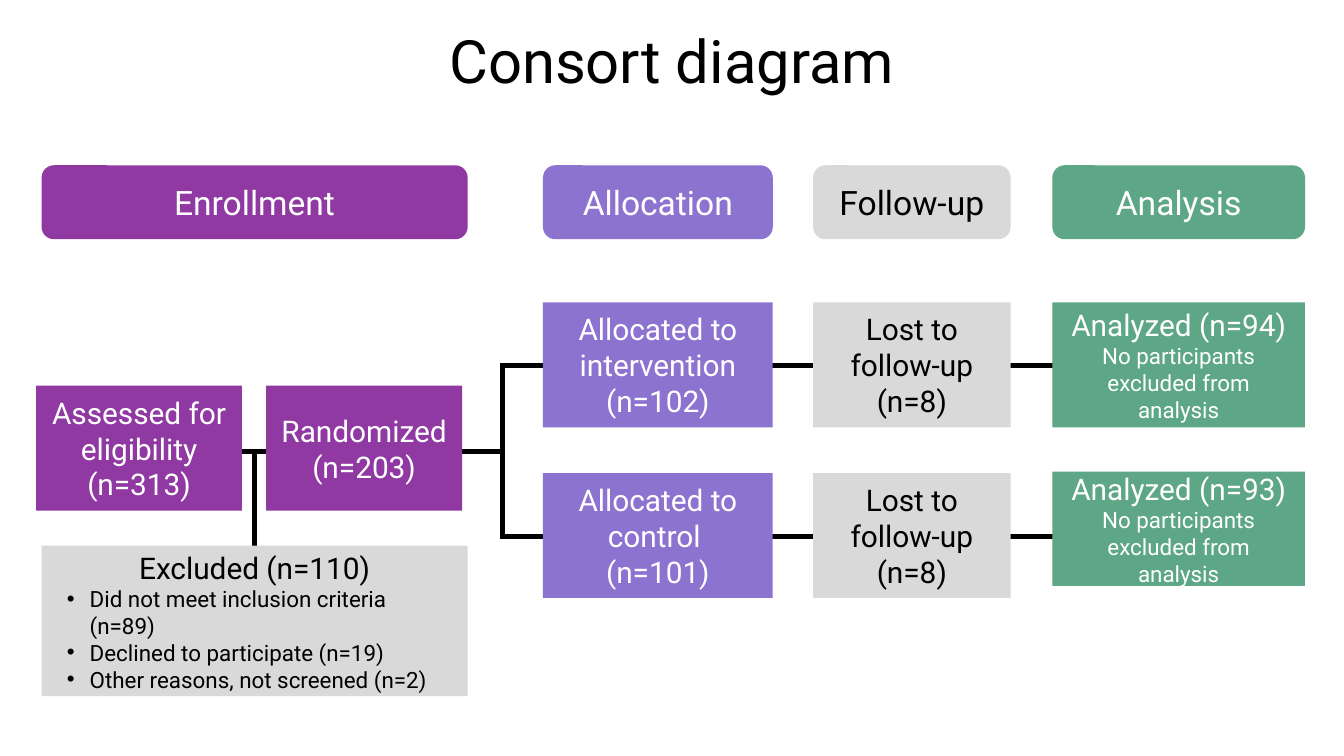
from lxml import etree
from pptx import Presentation
from pptx.dml.color import RGBColor
from pptx.enum.shapes import MSO_CONNECTOR, MSO_SHAPE
from pptx.enum.text import MSO_ANCHOR, PP_ALIGN
from pptx.oxml.ns import qn
from pptx.util import Inches, Pt

RECT, ROUND = MSO_SHAPE.RECTANGLE, MSO_SHAPE.ROUNDED_RECTANGLE
LINE = MSO_CONNECTOR.STRAIGHT
CENTER, LEFT, MIDDLE = PP_ALIGN.CENTER, PP_ALIGN.LEFT, MSO_ANCHOR.MIDDLE
FONT = "Roboto"
COLORS = {"purple": "9039A3", "violet": "8C73D0", "gray": "D9D9D9",
          "green": "5DA686", "white": "FFFFFF", "black": "000000"}

# Columns: left edge, width, fill
COLS = {
    "enroll": (0.31, 3.17, "purple"),
    "assess": (0.27, 1.53, "purple"),
    "random": (1.98, 1.46, "purple"),
    "exclude": (0.31, 3.17, "gray"),
    "alloc": (4.04, 1.71, "violet"),
    "follow": (6.05, 1.47, "gray"),
    "analysis": (7.83, 1.88, "green"),
}
# Rows: top edge, height
HEAD, MID, LOW = (1.23, 0.55), (2.87, 0.93), (4.06, 1.12)
ARM1, ARM2, ARM2_END = (2.25, 0.93), (3.52, 0.93), (3.51, 0.85)
TRUNK, ARM_END, HALF = 3.74, 8, 0.02
Y1, Y_MID, Y2 = 2.72, 3.36, 3.99
X_OUT = COLS["exclude"][0] + COLS["exclude"][1] / 2

prs = Presentation()
prs.slide_width = Inches(10)
prs.slide_height = prs.slide_width * 9 // 16
slide = prs.slides.add_slide(prs.slide_layouts[5])
shapes = slide.shapes


def add_line(x1, y1, x2, y2):
    line = shapes.add_connector(
        LINE, Inches(x1), Inches(y1), Inches(x2), Inches(y2))
    line.line.color.rgb = RGBColor.from_string(COLORS["black"])
    line.line.width = Pt(2.5)
    props = line._element.spPr
    etree.SubElement(props, qn("a:effectLst"))
    return line


def add_box(col, row, text, size=16, kind=RECT):
    """Draw a filled box; lines of text after the first are set smaller."""
    left, width, fill = COLS[col]
    top, height = row
    box = shapes.add_shape(
        kind, Inches(left), Inches(top), Inches(width), Inches(height))
    box.shadow.inherit = False
    box.fill.solid()
    box.fill.fore_color.rgb = RGBColor.from_string(COLORS[fill])
    box.line.fill.background()
    frame = box.text_frame
    frame.word_wrap = True
    frame.vertical_anchor = MIDDLE
    frame.text = text
    ink = "black" if fill == "gray" else "white"
    for i, para in enumerate(frame.paragraphs):
        para.alignment = CENTER
        for run in para.runs:
            run.font.name = FONT
            run.font.size = Pt(12 if i else size)
            run.font.color.rgb = RGBColor.from_string(COLORS[ink])
    return box


# Title
title = shapes.title
title.left, title.top = 0, Inches(0.18)
title.width, title.height = prs.slide_width, Inches(0.59)
title.text_frame.text = "Consort diagram"
title.text_frame.vertical_anchor = MIDDLE
para = title.text_frame.paragraphs[0]
para.alignment, para.line_spacing = CENTER, 0.9
font = para.runs[0].font
font.name, font.size = FONT, Pt(32)
font.color.rgb = RGBColor.from_string(COLORS["black"])

# Flow lines, behind the boxes; the arms cover the trunk's corners
for y in (Y1, Y2):
    add_line(TRUNK - HALF, y, ARM_END, y)
add_line(1.79, Y_MID, TRUNK, Y_MID)
add_line(TRUNK, Y1, TRUNK, Y2)
branch = add_line(X_OUT, Y_MID, X_OUT, LOW[0])

# Stage headings
for col, text in (("enroll", "Enrollment"), ("alloc", "Allocation"),
                  ("follow", "Follow-up"), ("analysis", "Analysis")):
    add_box(col, HEAD, text, 18, ROUND)

# Enrollment
add_box("assess", MID, "Assessed for eligibility (n=313)")
add_box("random", MID, "Randomized (n=203)")
out = add_box("exclude", LOW, "Excluded (n=110)\n"
              "Did not meet inclusion criteria (n=89)\n"
              "Declined to participate (n=19)\n"
              "Other reasons, not screened (n=2)")
for para in out.text_frame.paragraphs[1:]:
    para.alignment = LEFT
    props = para._p.get_or_add_pPr()
    props.set("marL", str(Inches(0.26)))
    props.set("indent", str(Inches(-0.17)))
    etree.SubElement(props, qn("a:buFont"), typeface="Arial")
    etree.SubElement(props, qn("a:buChar"), char="•")
branch.end_connect(out, 0)

# Two study arms
ARMS = (
    (ARM1, ARM1, "Allocated to intervention (n=102)", 94),
    (ARM2, ARM2_END, "Allocated to control \v(n=101)", 93),
)
for row, last, text, count in ARMS:
    add_box("alloc", row, text)
    add_box("follow", row, "Lost to follow-up (n=8)")
    add_box("analysis", last, f"Analyzed (n={count})\n"
            "No participants excluded from analysis")

prs.save("out.pptx")
